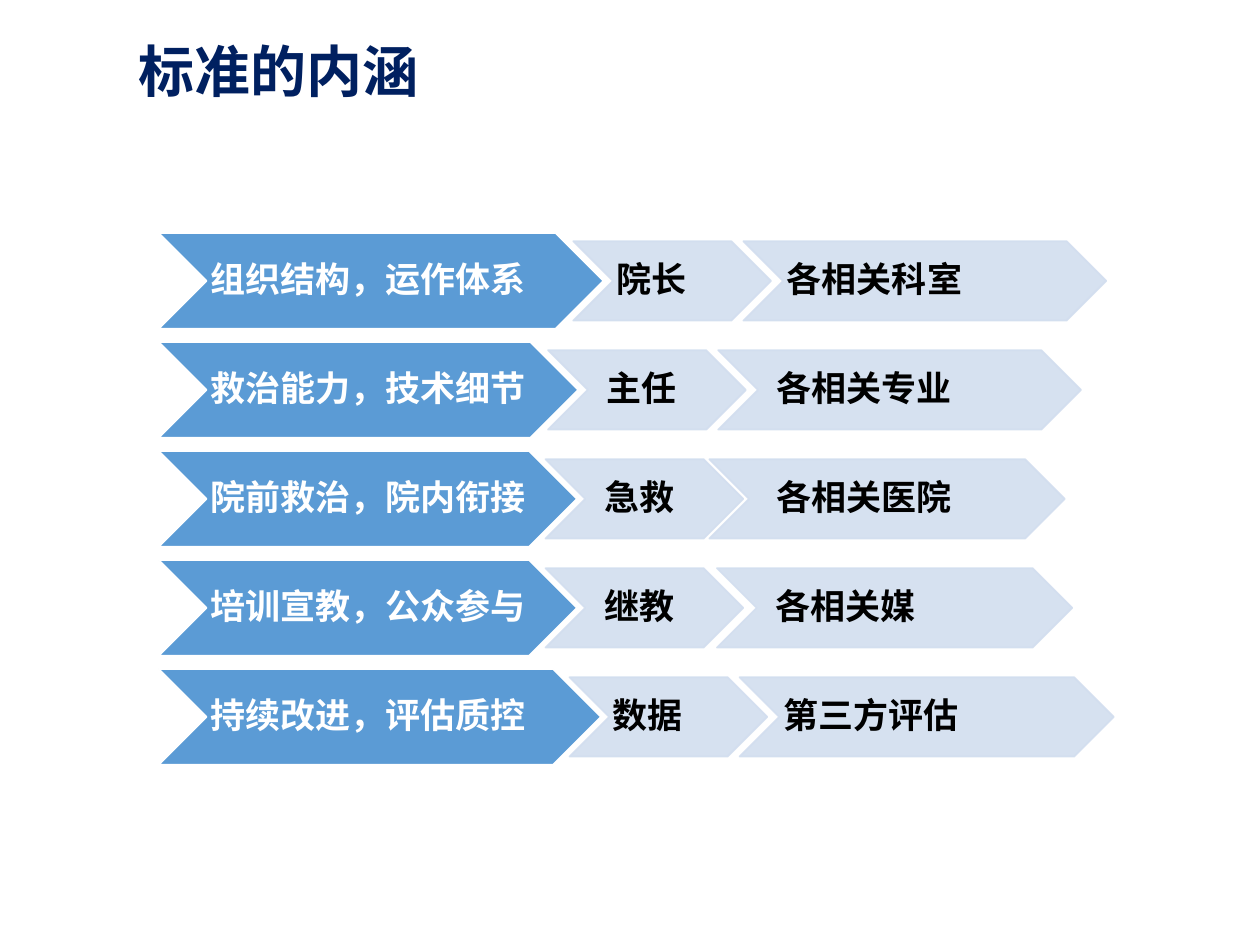
from pptx import Presentation, util as u
from pptx.dml.color import RGBColor
from pptx.enum import shapes, text
from pptx.oxml.ns import qn
from lxml import etree

# Content: (label, left, width, indent) for each chevron of a row
TITLE = "标准的内涵"
ROWS = [
    [("组织结构，运作体系", 1.26, 3.53, 0), ("院长", 4.55, 1.57, 0), ("各相关科室", 5.9, 2.88, 0)],
    [("救治能力，技术细节", 1.26, 3.33, 0), ("主任", 4.35, 1.57, 0.12), ("各相关专业", 5.7, 2.88, 0.12)],
    [("院前救治，院内衔接", 1.26, 3.32, 0), ("急救", 4.33, 1.57, 0.12), ("各相关医院", 5.63, 2.82, 0.19)],
    [("培训宣教，公众参与", 1.26, 3.32, 0), ("继教", 4.33, 1.57, 0.12), ("各相关媒", 5.69, 2.82, 0.12)],
    [("持续改进，评估质控", 1.26, 3.51, 0), ("数据", 4.52, 1.57, 0), ("第三方评估", 5.87, 2.97, 0)],
]
COLORS = {"title": "002060", "lead": "5B9BD5", "step": "D2DEEF", "white": "FFFFFF", "black": "000000"}
FONT = "Noto Sans CJK SC"
TOP, LAST_TOP = 1.85, 5.31
LEAD_H, STEP_H = 0.76, 0.63
PITCH = (LAST_TOP - TOP) / (len(ROWS) - 1)


def rgb(name):
    return RGBColor.from_string(COLORS[name])


def write(tf, label, size, color):
    tf.text = label
    tf.word_wrap = True
    tf.vertical_anchor = text.MSO_ANCHOR.MIDDLE
    p = tf.paragraphs[0]
    p.alignment = text.PP_ALIGN.LEFT
    p.line_spacing = 0.9
    r = p.runs[0]
    r.font.size, r.font.bold, r.font.name = u.Pt(size), True, FONT
    r.font.color.rgb = rgb(color)
    etree.SubElement(r.font._element, qn("a:ea"), typeface=FONT)


def add_chevron(s, label, left, top, width, height, indent, fill, line, color):
    sp = s.shapes.add_shape(shapes.MSO_SHAPE.CHEVRON, *map(u.Inches, (left, top, width, height)))
    sp.shadow.inherit = False
    sp.fill.solid()
    sp.fill.fore_color.rgb = rgb(fill)
    sp.line.color.rgb = rgb(line)
    sp.line.width = u.Pt(1)
    tf = sp.text_frame
    tf.margin_left, tf.margin_right = u.Inches(0.03 + indent), 0
    tf.margin_top = tf.margin_bottom = u.Inches(0.01)
    write(tf, label, 20, color)
    return sp


prs = Presentation()
prs.slide_width, prs.slide_height = u.Inches(10), u.Inches(7.5)
s = prs.slides.add_slide(prs.slide_layouts[5])

# Title
title = s.shapes.title
title.left, title.top, title.width, title.height = map(u.Inches, (1, 0.12, 9, 0.94))
write(title.text_frame, TITLE, 32, "title")

# Rows: a lead chevron, then two smaller ones centred on it
for i, (lead, *steps) in enumerate(ROWS):
    top = TOP + i * PITCH
    label, left, width, indent = lead
    add_chevron(s, label, left, top, width, LEAD_H, indent, "lead", "white", "white")
    for label, left, width, indent in steps:
        sp = add_chevron(s, label, left, top + (LEAD_H - STEP_H) / 2, width, STEP_H,
                         indent, "step", "step", "black")
        for clr in sp._element.spPr.iter(qn("a:srgbClr")):
            etree.SubElement(clr, qn("a:alpha"), val="90000")

prs.save("out.pptx")
